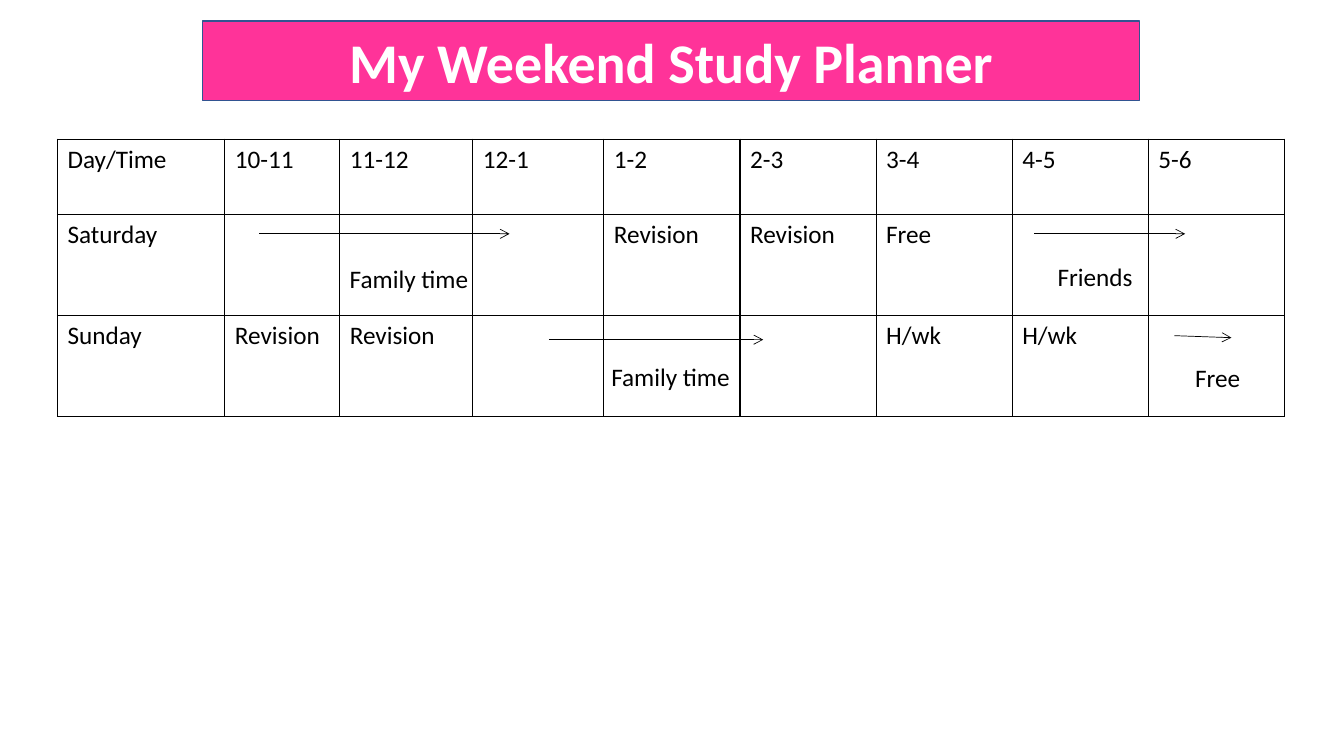
from itertools import accumulate
from lxml.etree import SubElement
from pptx import Presentation
from pptx.dml.color import RGBColor
from pptx.enum.shapes import MSO_CONNECTOR as Connector, MSO_SHAPE as Shape
from pptx.enum.text import MSO_ANCHOR as Anchor, PP_ALIGN as Align
from pptx.oxml import parse_xml
from pptx.oxml.ns import nsdecls, qn
from pptx.util import Inches, Pt

TITLE = "My Weekend Study Planner"
PLAN = [
    ["Day/Time", "10-11", "11-12", "12-1", "1-2", "2-3", "3-4", "4-5", "5-6"],
    ["Saturday", "", "", "", "Revision", "Revision", "Free", "", ""],
    ["Sunday", "Revision", "Revision", "", "", "", "H/wk", "H/wk", ""],
]
# label, row, arrow columns, arrow rows, label column, label row, label width
SPANS = [
    ("Family time", 2, (3.58, 5.17), (0.24, 0.24), 3.98, 0.41, 1.81),
    ("Family time", 1, (1.3, 3.28), (0.19, 0.19), 2, 0.43, 1.42),
    ("Free", 2, (8.19, 8.61), (0.2, 0.22), 8.27, 0.42, 0.73),
    ("Friends", 1, (7.16, 8.27), (0.19, 0.19), 7.26, 0.41, 1.81),
]
PINK = RGBColor(0xFF, 0x33, 0x99)
BLUE = RGBColor(0x32, 0x54, 0x91)
WHITE = RGBColor(0xFF, 0xFF, 0xFF)
BLACK = RGBColor(0, 0, 0)

LEFT, TOP = 0.57, 1.38
WIDTHS = [1.66, 1.14, 1.32, 1.3] + [1.35] * 5
HEIGHTS = [0.75, 1, 1]
COLUMN_EDGES = list(accumulate(WIDTHS, initial=LEFT))
ROW_EDGES = list(accumulate(HEIGHTS, initial=TOP))


def on_grid(edges, place):
    index = int(place)
    return Inches(edges[index] + (place - index) * (edges[index + 1] - edges[index]))


def write(frame, text, size=18, color=BLACK, bold=False):
    frame.text = text
    font = frame.paragraphs[0].font
    for target in [font] + [span.font for span in frame.paragraphs[0].runs]:
        target.name, target.size, target.bold = "Calibri", Pt(size), bold
        target.color.rgb = color


def add_title(page):
    box = page.shapes.add_shape(
        Shape.RECTANGLE, Inches(2.01), Inches(0.21), Inches(9.29), Inches(0.79))
    box.shadow.inherit = False
    box.fill.solid()
    box.fill.fore_color.rgb = PINK
    box.line.color.rgb = BLUE
    box.line.width = Pt(1)
    write(box.text_frame, TITLE, 40, WHITE, True)
    box.text_frame.vertical_anchor = Anchor.MIDDLE
    box.text_frame.paragraphs[0].alignment = Align.CENTER


def add_borders(cell):
    cell.fill.background()
    properties = cell._tc.get_or_add_tcPr()
    for index, side in enumerate("LRTB"):
        properties.insert(index, parse_xml(
            f'<a:ln{side} {nsdecls("a")} w="{Pt(1)}"><a:solidFill>'
            f'<a:srgbClr val="{BLACK}"/></a:solidFill></a:ln{side}>'))


def add_plan(page):
    table = page.shapes.add_table(
        len(HEIGHTS), len(WIDTHS), Inches(LEFT), Inches(TOP),
        Inches(sum(WIDTHS)), Inches(sum(HEIGHTS))).table
    table.first_row = table.horz_banding = False
    for column, width in zip(table.columns, WIDTHS):
        column.width = Inches(width)
    for row, height, texts in zip(table.rows, HEIGHTS, PLAN):
        row.height = Inches(height)
        for cell, text in zip(row.cells, texts):
            write(cell.text_frame, text)
            add_borders(cell)


def add_span(page, label, row, columns, rows, label_column, label_row, width):
    start, end = [(on_grid(COLUMN_EDGES, column), on_grid(ROW_EDGES, row + share))
                  for column, share in zip(columns, rows)]
    arrow = page.shapes.add_connector(Connector.STRAIGHT, *start, *end)
    arrow.line.color.rgb = BLACK
    arrow.line.width = Pt(0.5)
    SubElement(arrow.line._get_or_add_ln(), qn("a:tailEnd"), type="arrow")
    SubElement(arrow._element.spPr, qn("a:effectLst"))
    box = page.shapes.add_textbox(
        on_grid(COLUMN_EDGES, label_column), on_grid(ROW_EDGES, row + label_row),
        Inches(width), Inches(0.4))
    box.text_frame.word_wrap = True
    write(box.text_frame, label)


def main():
    deck = Presentation()
    deck.slide_width, deck.slide_height = Inches(13.33), Inches(7.5)
    page = deck.slides.add_slide(deck.slide_layouts[6])
    add_title(page)
    add_plan(page)
    for span in SPANS:
        add_span(page, *span)
    deck.save("out.pptx")


if __name__ == "__main__":
    main()
